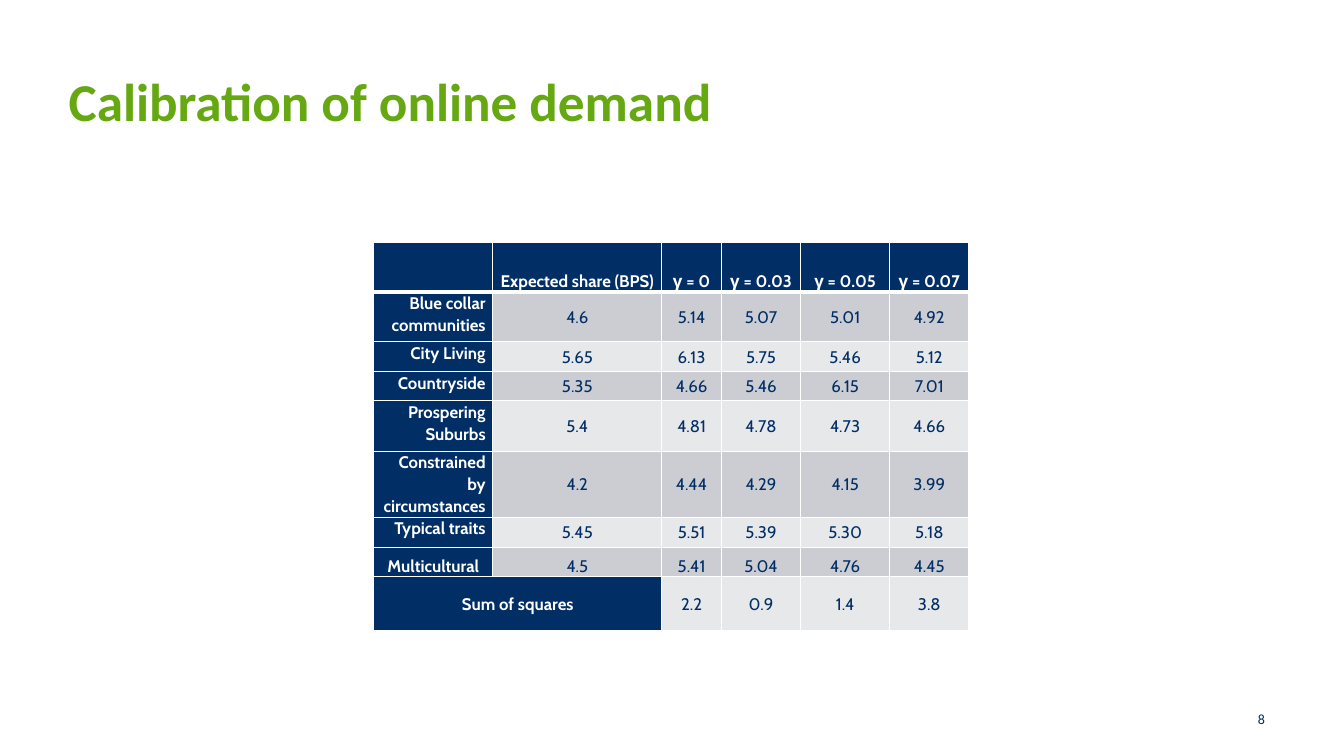
from lxml import etree
from pptx import Presentation
from pptx.dml.color import RGBColor
from pptx.enum.text import MSO_ANCHOR, PP_ALIGN
from pptx.oxml.ns import qn
from pptx.util import Cm, Pt

TOP, MIDDLE, BOTTOM = MSO_ANCHOR.TOP, MSO_ANCHOR.MIDDLE, MSO_ANCHOR.BOTTOM
LEFT, CENTER, RIGHT = PP_ALIGN.LEFT, PP_ALIGN.CENTER, PP_ALIGN.RIGHT

COLORS = {
    "green": "65A812",
    "navy": "002E65",
    "white": "FFFFFF",
    "dark band": "CCCDD3",
    "light band": "E7E8EA",
}

TITLE = "Calibration of online demand"
SLIDE_NUMBER = "8"
TABLE_ROWS = [
    ["", "Expected share (BPS)", "γ = 0", "γ = 0.03", "γ = 0.05", "γ = 0.07"],
    ["Blue collar communities", "4.6", "5.14", "5.07", "5.01", "4.92"],
    ["City Living", "5.65", "6.13", "5.75", "5.46", "5.12"],
    ["Countryside", "5.35", "4.66", "5.46", "6.15", "7.01"],
    ["Prospering Suburbs", "5.4", "4.81", "4.78", "4.73", "4.66"],
    ["Constrained by circumstances", "4.2", "4.44", "4.29", "4.15", "3.99"],
    ["Typical traits", "5.45", "5.51", "5.39", "5.30", "5.18"],
    ["Multicultural", "4.5", "5.41", "5.04", "4.76", "4.45"],
    ["Sum of squares", "", "2.2", "0.9", "1.4", "3.8"],
]
COLUMN_WIDTHS = [3, 4.26, 1.5, 2, 2.24, 2]
ROW_HEIGHTS = [1.24, 1.24, 0.76, 0.74, 1.27, 1.66, 0.76, 0.74, 1.35]
HEADER_ROW, MULTICULTURAL_ROW, SUM_ROW = 0, 7, 8


def format_text(paragraph, font_name, size, color, bold, alignment):
    paragraph.alignment = alignment
    for run in paragraph.runs:
        run.font.name = font_name
        run.font.size = Pt(size)
        run.font.bold = bold
        run.font.color.rgb = RGBColor.from_string(COLORS[color])


def set_borders(cell, bottom_width):
    """Draw white cell borders; the bottom one may be heavier."""
    properties = cell._tc.get_or_add_tcPr()
    widths = {"a:lnL": 1, "a:lnR": 1, "a:lnT": 1, "a:lnB": bottom_width}
    for position, (tag, width) in enumerate(widths.items()):
        line = etree.Element(qn(tag), w=str(Pt(width)))
        fill = etree.SubElement(line, qn("a:solidFill"))
        etree.SubElement(fill, qn("a:srgbClr"), val=COLORS["white"])
        properties.insert(position, line)


def cell_placement(row, column):
    """Return the vertical anchor and the alignment of a cell."""
    if row in (HEADER_ROW, MULTICULTURAL_ROW):
        return BOTTOM, CENTER
    if column == 0 and row != SUM_ROW:
        return TOP, RIGHT
    return MIDDLE, CENTER


def format_cell(cell, row, column):
    is_label = row == HEADER_ROW or column == 0
    band = "dark band" if row % 2 else "light band"
    cell.fill.solid()
    cell.fill.fore_color.rgb = RGBColor.from_string(
        COLORS["navy" if is_label else band])
    set_borders(cell, 3 if row == HEADER_ROW else 1)
    cell.margin_left = cell.margin_right = Cm(0.18)
    cell.margin_top = cell.margin_bottom = 0
    cell.vertical_anchor, alignment = cell_placement(row, column)
    paragraph = cell.text_frame.paragraphs[0]
    paragraph.line_spacing = 1.07
    paragraph.space_after = Pt(8)
    format_text(paragraph, "Cabin", 12, "white" if is_label else "navy",
                is_label, alignment)


def add_title(slide):
    title = slide.shapes.title
    title.left, title.top = Cm(1.73), Cm(1.73)
    title.width, title.height = Cm(30.4), Cm(2.21)
    frame = title.text_frame
    frame.text = TITLE
    frame.vertical_anchor = TOP
    frame.margin_left = frame.margin_right = 0
    frame.margin_top = frame.margin_bottom = 0
    format_text(frame.paragraphs[0], "Calibri", 38, "green", True, LEFT)


def add_slide_number(slide):
    box = slide.shapes.add_textbox(Cm(24.79), Cm(17.6), Cm(7.34), Cm(1.02))
    frame = box.text_frame
    frame.word_wrap = True
    frame.vertical_anchor = MIDDLE
    frame.text = SLIDE_NUMBER
    format_text(frame.paragraphs[0], "Calibri", 10, "navy", False, RIGHT)


def add_calibration_table(slide):
    table = slide.shapes.add_table(
        len(ROW_HEIGHTS), len(COLUMN_WIDTHS), Cm(9.42), Cm(6.12),
        Cm(sum(COLUMN_WIDTHS)), Cm(sum(ROW_HEIGHTS))).table
    for column, width in zip(table.columns, COLUMN_WIDTHS):
        column.width = Cm(width)
    for row, height in zip(table.rows, ROW_HEIGHTS):
        row.height = Cm(height)
    for row, values in enumerate(TABLE_ROWS):
        for column, value in enumerate(values):
            cell = table.cell(row, column)
            cell.text_frame.text = value
            format_cell(cell, row, column)
    table.cell(SUM_ROW, 0).merge(table.cell(SUM_ROW, 1))


def main():
    presentation = Presentation()
    presentation.slide_width, presentation.slide_height = Cm(33.87), Cm(19.05)
    slide = presentation.slides.add_slide(presentation.slide_layouts[5])
    add_title(slide)
    add_slide_number(slide)
    add_calibration_table(slide)
    presentation.save("out.pptx")


if __name__ == "__main__":
    main()
